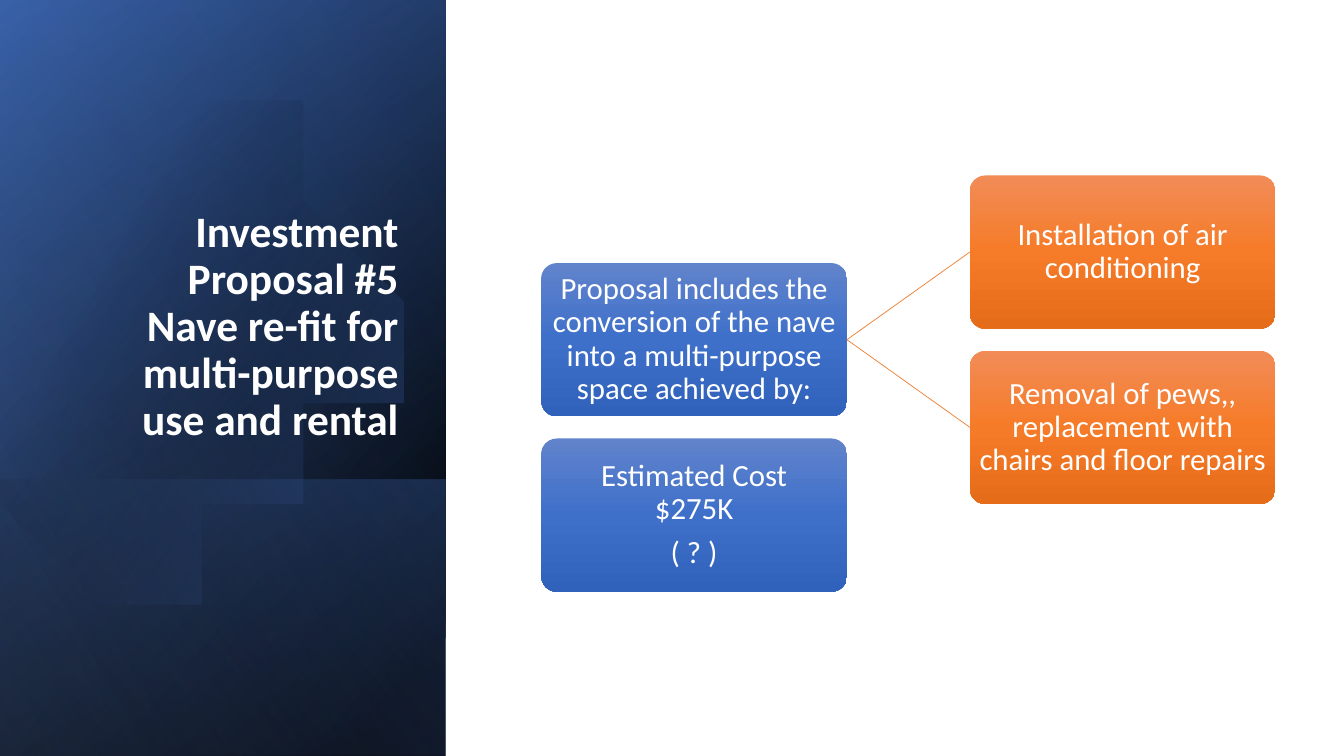
import math
from pptx import Presentation, dml, oxml, util as u
from pptx.dml import color
from pptx.enum import shapes, text
from pptx.oxml import ns

BLUE = [(0, "6183CB", 100), (50, "3E70CA", 100), (100, "3062BB", 100)]
ORANGE = [(0, "F18C57", 100), (50, "F67B28", 100), (100, "E56C19", 100)]


def hue(code):
    return color.RGBColor.from_string(code)


def blend(shape, stops, angle):
    shape.shadow.inherit = False
    shape.line.fill.background()
    shape.fill.background()
    marks = "".join(
        f'<a:gs pos="{pos * 1000}"><a:srgbClr val="{hue(code)}">'
        f'<a:alpha val="{alpha * 1000}"/></a:srgbClr></a:gs>'
        for pos, code, alpha in stops)
    grad = oxml.parse_xml(
        f'<a:gradFill {ns.nsdecls("a")} rotWithShape="1"><a:gsLst>{marks}</a:gsLst>'
        f'<a:lin ang="{angle * 60000}" scaled="0"/></a:gradFill>')
    props = shape._element.spPr
    props.replace(props.find(ns.qn("a:noFill")), grad)


def write(par, words, size, bold=False):
    par.line_spacing = 0.9
    for i, line in enumerate(words.split("\n")):
        if i:
            par.add_line_break()
        run = par.add_run()
        run.text = line
        run.font.name = "Calibri"
        run.font.size = u.Pt(size)
        run.font.bold = bold
        run.font.color.rgb = hue("FFFFFF")


def sheet(slide, left, top, wide, high, stops, angle):
    x = left + (wide - high) / 2
    y = top + (high - wide) / 2
    shape = slide.shapes.add_shape(
        shapes.MSO_SHAPE.RECTANGLE, *map(u.Inches, (x, y, high, wide)))
    shape.rotation = 90
    shape._element.spPr.xfrm.set("flipH", "1")
    blend(shape, stops, angle)


def disc(slide, x, y, rad):
    edge = math.acos(-x / rad)
    steps = 90
    turns = [edge * (2 * i / steps - 1) for i in range(steps + 1)]
    dots = [(x + rad * math.cos(t), y + rad * math.sin(t)) for t in turns]
    form = slide.shapes.build_freeform(*dots[0], scale=u.Inches(1))
    form.add_line_segments(dots[1:], close=True)
    blend(form.convert_to_shape(), [(29, "000000", 0), (100, "4472C4", 43)], 30)


def panel(slide, left, top, wide, high):
    full = left, top, wide, high
    low = 2.74
    sheet(slide, *full, [(8, "000000", 100), (100, "2F5597", 100)], 50)
    sheet(slide, *full, [(0, "000000", 0), (99, "4472C4", 46)], 30)
    sheet(slide, left, top + high - low, wide, low,
          [(2, "4472C4", 29), (100, "000000", 30)], 130)
    disc(slide, left + 1.44, top + 3.39, 2.28)
    sheet(slide, *full, [(0, "000000", 0), (99, "8FAADC", 11)], 120)


def head(slide, left, top, wide, high):
    title = slide.shapes.title
    title.left, title.top, title.width, title.height = map(
        u.Inches, (left, top, wide, high))
    frame = title.text_frame
    frame.word_wrap = True
    frame.auto_size = text.MSO_AUTO_SIZE.NONE
    frame.vertical_anchor = text.MSO_ANCHOR.BOTTOM
    par = frame.paragraphs[0]
    par.alignment = text.PP_ALIGN.RIGHT
    write(par, "Investment\nProposal #5\nNave re-fit for multi-purpose use and rental", 31, True)
    tree = slide.shapes._spTree
    tree.remove(title._element)
    tree.append(title._element)


def card(slide, left, top, wide, high, stops, lines):
    shape = slide.shapes.add_shape(
        shapes.MSO_SHAPE.ROUNDED_RECTANGLE, *map(u.Inches, (left, top, wide, high)))
    shape.adjustments[0] = 0.1
    blend(shape, stops, 90)
    frame = shape.text_frame
    frame.word_wrap = True
    frame.vertical_anchor = text.MSO_ANCHOR.MIDDLE
    frame.margin_left = frame.margin_right = u.Inches(0.02)
    frame.margin_top = frame.margin_bottom = u.Inches(0.02)
    for i, line in enumerate(lines):
        par = frame.add_paragraph() if i else frame.paragraphs[0]
        par.alignment = text.PP_ALIGN.CENTER
        par.space_after = u.Pt(7.7)
        write(par, line, 22)
    return shape


def link(slide, start, end):
    line = slide.shapes.add_connector(shapes.MSO_CONNECTOR.STRAIGHT, 0, 0, 0, 0)
    line.begin_connect(start, 3)
    line.end_connect(end, 1)
    line.line.color.rgb = hue("ED7D31")
    line.line.width = u.Pt(0.5)
    line._element.spPr.append(oxml.parse_xml(f'<a:effectLst {ns.nsdecls("a")}/>'))


def chart(slide, left, top, wide, high):
    w, h = 3.03, 1.52
    step = (high - h) / 1.5
    right = left + wide - w
    root = card(slide, left, top + step / 2, w, h, BLUE,
                ["Proposal includes the conversion of the nave into a multi-purpose space achieved by:"])
    parts = ["Installation of air conditioning",
             "Removal of pews,, replacement with chairs and floor repairs"]
    for i, part in enumerate(parts):
        leaf = card(slide, right, top + i * step, w, h, ORANGE, [part])
        link(slide, root, leaf)
    card(slide, left, top + 1.5 * step, w, h, BLUE, ["Estimated Cost\n$275K", "( ? )"])


def main():
    deck = Presentation()
    deck.slide_width = u.Inches(13.33)
    deck.slide_height = u.Inches(7.5)
    slide = deck.slides.add_slide(deck.slide_layouts[5])
    panel(slide, 0, 0, 4.42, 7.5)
    head(slide, 0.64, 1.84, 3.41, 2.62)
    chart(slide, 5.37, 1.74, 7.28, 4.13)
    deck.save("out.pptx")


if __name__ == "__main__":
    main()
